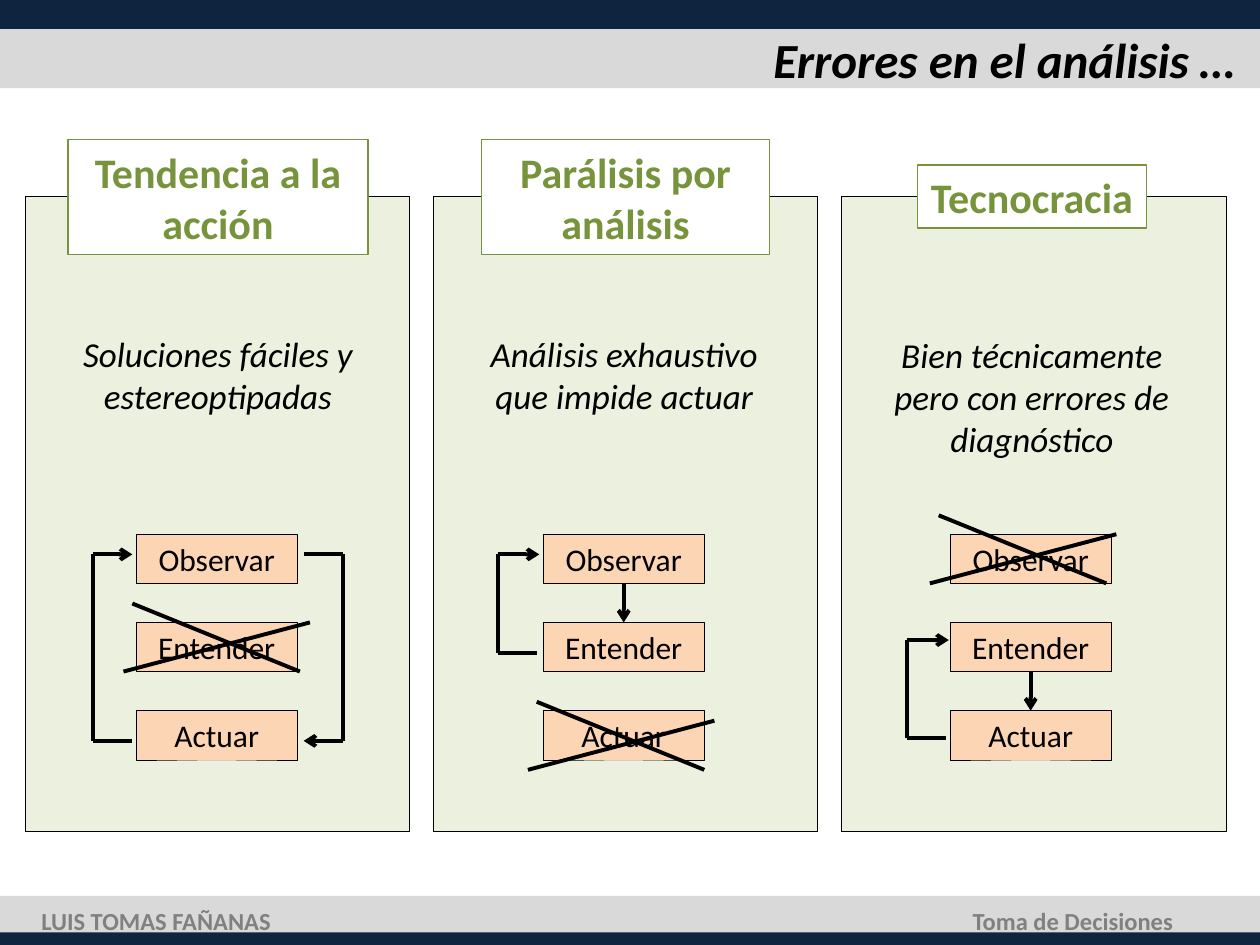
from lxml.etree import SubElement
from pptx import Presentation
from pptx.dml.color import RGBColor
from pptx.enum.shapes import MSO_CONNECTOR, MSO_SHAPE
from pptx.enum.text import MSO_ANCHOR, PP_ALIGN
from pptx.oxml.ns import qn
from pptx.util import Inches, Pt


def rgb(value):
    return RGBColor.from_string(value)


class Builder:
    """Holds the style and the current slide and draws each kind of element."""

    BLACK, NAVY, GREY = "000000", "0F243E", "D9D9D9"
    PANEL, STEP, GREEN, MUTED, WHITE = "EBF1DE", "FCD5B5", "77933C", "808080", "FFFFFF"
    TITLE = {"size": Pt(28), "bold": True, "italic": True}
    HEADING = {"size": Pt(24), "bold": True}
    BODY = {"size": Pt(20), "bold": False, "italic": True}
    LABEL = {"size": Pt(18), "bold": False}
    FOOTER = {"size": Pt(14), "bold": True}

    def __init__(self, slide):
        self.s = slide

    def set_text(self, sp, text, style, color=BLACK, align=PP_ALIGN.CENTER, wrap=True):
        tf = sp.text_frame
        tf.word_wrap = wrap
        tf.vertical_anchor = MSO_ANCHOR.MIDDLE
        p = tf.paragraphs[0]
        p.alignment = align
        r = p.add_run()
        r.text = text
        for name, value in {"name": "Calibri", **style}.items():
            setattr(r.font, name, value)
        r.font.color.rgb = rgb(color)

    def title(self, text, *at):
        sp = self.s.shapes.title
        for name, value in zip(("left", "top", "width", "height"), at):
            setattr(sp, name, Inches(value))
        self.set_text(sp, text, self.TITLE, align=PP_ALIGN.RIGHT)
        self.s.shapes._spTree.append(sp._element)

    def rect(self, at, fill, line=None, weight=0.25):
        sp = self.s.shapes.add_shape(MSO_SHAPE.RECTANGLE, *map(Inches, at))
        sp.shadow.inherit = False
        sp.fill.solid()
        sp.fill.fore_color.rgb = rgb(fill)
        if line:
            sp.line.color.rgb = rgb(line)
            sp.line.width = Pt(weight)
        else:
            sp.line.fill.background()
        return sp

    def text(self, at, text, style, **options):
        sp = self.s.shapes.add_textbox(*map(Inches, at))
        self.set_text(sp, text, style, **options)

    def line(self, start, end, arrow=False):
        cx = self.s.shapes.add_connector(
            MSO_CONNECTOR.STRAIGHT, *map(Inches, (*start, *end)))
        cx.line.color.rgb = rgb(self.BLACK)
        cx.line.width = Pt(2.25)
        if arrow:
            SubElement(cx.line._get_or_add_ln(), qn("a:tailEnd"), type="arrow")
        SubElement(cx._element.spPr, qn("a:effectLst"))
        return cx

    def join(self, upper, lower):
        cx = self.line((0, 0), (0, 0), arrow=True)
        cx.begin_connect(upper, 2)
        cx.end_connect(lower, 0)

    def loop(self, start_x, side_x, end_x, start_y, end_y):
        points = [(start_x, start_y), (side_x, start_y), (side_x, end_y), (end_x, end_y)]
        for i, (a, b) in enumerate(zip(points, points[1:])):
            self.line(a, b, arrow=i == 2)

    def cross(self, x, y):
        self.line((x - 0.03, y - 0.15), (x + 1.3, y + 0.39))
        self.line((x - 0.1, y + 0.39), (x + 1.38, y))


COLUMNS = [
    {"heading": "Tendencia a la acción", "box": (0.54, 1.11, 2.38, 0.91),
     "body": "Soluciones fáciles y estereoptipadas", "area": (0.44, 2.59, 2.58, 0.77),
     "loops": [(1.05, 0.74, 1.05, 5.88, 4.4), (2.41, 2.72, 2.41, 4.4, 5.88)],
     "join": None, "cross": (1.08, 4.94)},
    {"heading": "Parálisis por análisis", "box": (3.82, 1.11, 2.29, 0.91),
     "body": "Análisis exhaustivo que impide actuar", "area": (3.59, 2.59, 2.73, 0.77),
     "loops": [(4.26, 3.95, 4.28, 5.18, 4.4)], "join": 0, "cross": (4.29, 5.72)},
    {"heading": "Tecnocracia", "box": (7.28, 1.31, 1.82, 0.5),
     "body": "Bien técnicamente pero con errores de diagnóstico",
     "area": (6.86, 2.59, 2.66, 1.11),
     "loops": [(7.51, 7.2, 7.53, 5.86, 5.08)], "join": 1, "cross": (7.48, 4.24)},
]
STEPS = ["Observar", "Entender", "Actuar"]


def main():
    prs = Presentation()
    prs.slide_width, prs.slide_height = Inches(10), Inches(7.5)
    b = Builder(prs.slides.add_slide(prs.slide_layouts[5]))

    for top, height, fill in [(0, 0.7, b.GREY), (0, 0.23, b.NAVY),
                              (7.11, 0.34, b.GREY), (7.4, 0.1, b.NAVY)]:
        b.rect((0, top, 10, height), fill)
    b.title("Errores en el análisis …", 1.87, 0.23, 8.03, 0.48)

    for i, col in enumerate(COLUMNS):
        b.rect((0.2 + 3.24 * i, 1.56, 3.05, 5.04), b.PANEL, b.BLACK)
        heading = b.rect(col["box"], b.WHITE, b.GREEN, 0.75)
        b.set_text(heading, col["heading"], b.HEADING, b.GREEN, wrap=" " in col["heading"])
        b.text(col["area"], col["body"], b.BODY)
        boxes = []
        for j, step in enumerate(STEPS):
            sp = b.rect((1.08 + 3.23 * i, 4.24 + 0.7 * j, 1.28, 0.39), b.STEP, b.BLACK)
            b.set_text(sp, step, b.LABEL)
            boxes.append(sp)
        for loop in col["loops"]:
            b.loop(*loop)
        if col["join"] is not None:
            b.join(*boxes[col["join"]:col["join"] + 2])
        b.cross(*col["cross"])

    b.text((0.23, 7.14, 2.04, 0.34), "LUIS TOMAS FAÑANAS", b.FOOTER,
           color=b.MUTED, align=PP_ALIGN.LEFT, wrap=False)
    b.text((7.61, 7.14, 1.8, 0.34), "Toma de Decisiones", b.FOOTER,
           color=b.MUTED, align=PP_ALIGN.RIGHT, wrap=False)
    prs.save("out.pptx")


if __name__ == "__main__":
    main()
